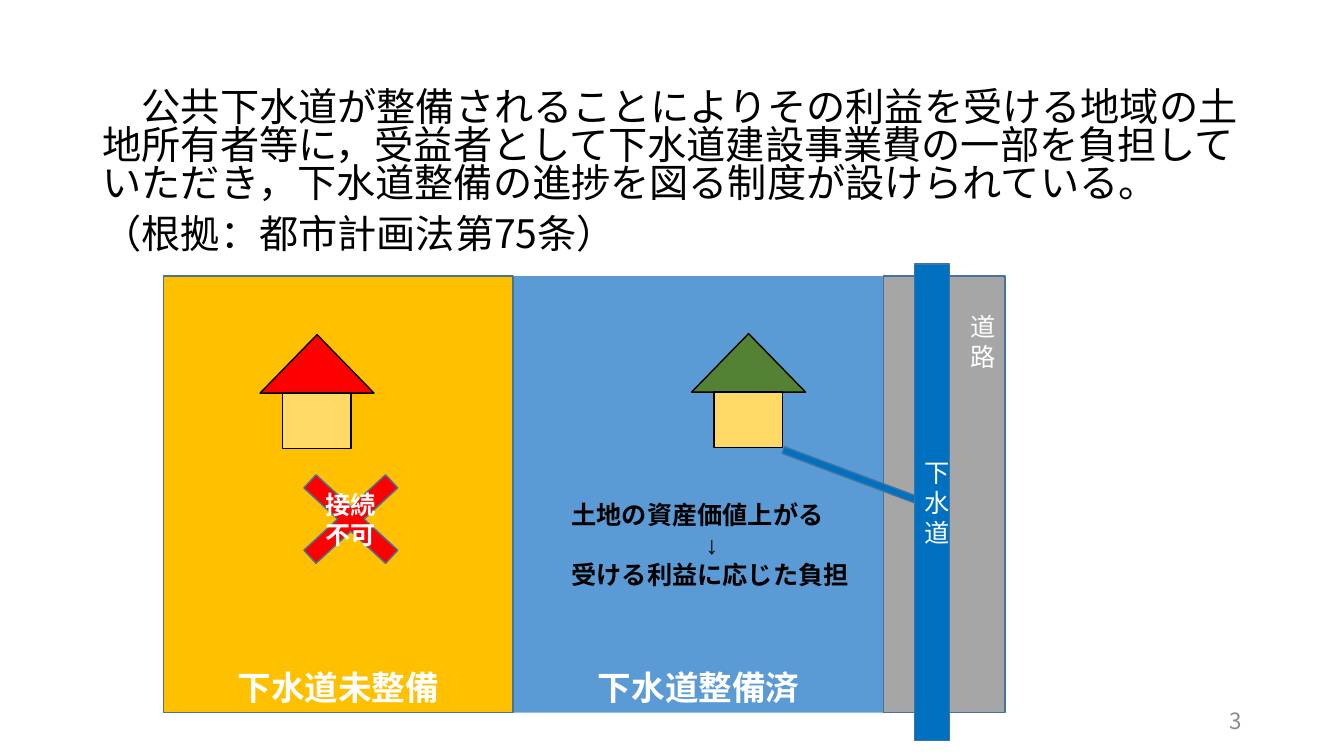
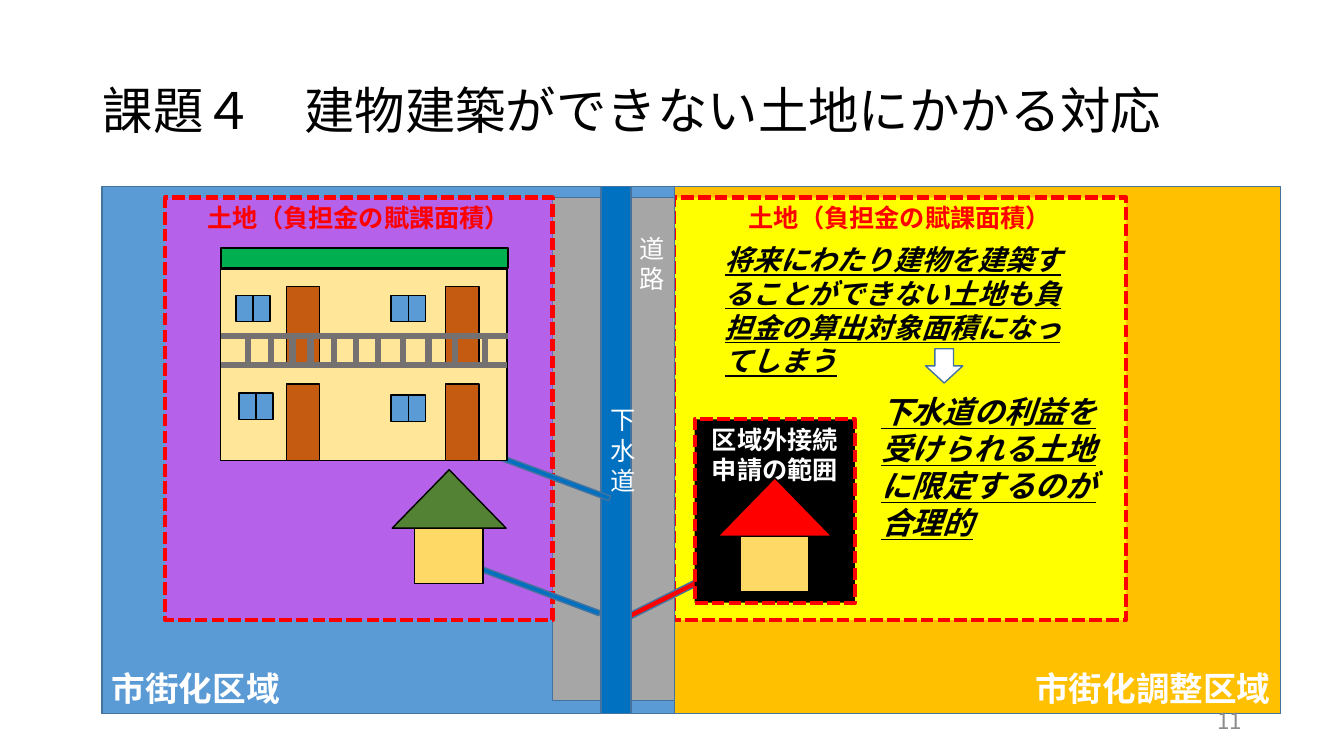
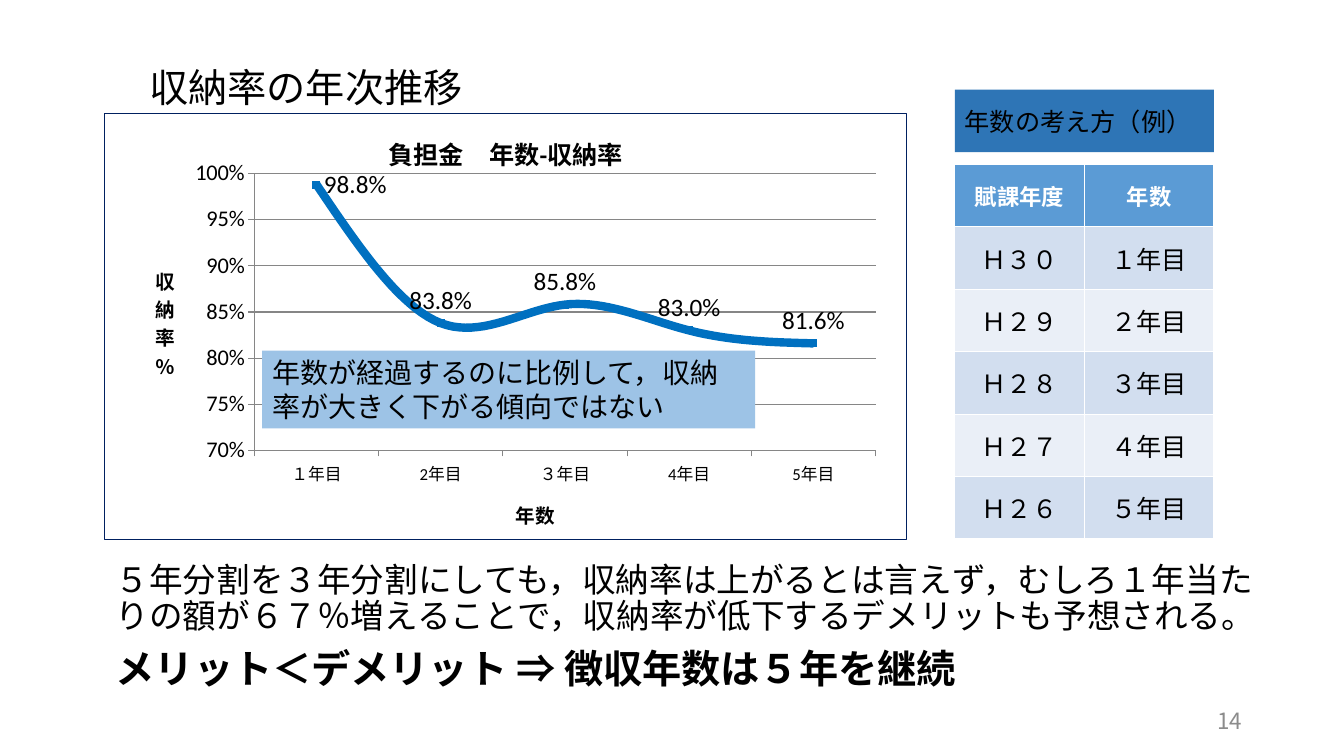
from dataclasses import dataclass, replace

from lxml import etree
from pptx import Presentation
from pptx.chart.data import CategoryChartData
from pptx.dml.color import RGBColor
from pptx.enum.chart import XL_CHART_TYPE, XL_LABEL_POSITION, XL_MARKER_STYLE, XL_TICK_MARK
from pptx.enum.dml import MSO_LINE
from pptx.enum.shapes import MSO_CONNECTOR, MSO_SHAPE
from pptx.enum.text import MSO_ANCHOR, PP_ALIGN
from pptx.oxml import parse_xml
from pptx.oxml.ns import nsdecls, qn
from pptx.util import Emu, Pt

PX = 9144  # 100 px to the inch
RECT, TRIANGLE = MSO_SHAPE.RECTANGLE, MSO_SHAPE.ISOSCELES_TRIANGLE
CROSS, DOWN_ARROW = MSO_SHAPE.MATH_MULTIPLY, MSO_SHAPE.DOWN_ARROW
STRAIGHT, DASH = MSO_CONNECTOR.STRAIGHT, MSO_LINE.SQUARE_DOT
LEFT, CENTER, RIGHT = PP_ALIGN.LEFT, PP_ALIGN.CENTER, PP_ALIGN.RIGHT
TOP, MIDDLE, BOTTOM = MSO_ANCHOR.TOP, MSO_ANCHOR.MIDDLE, MSO_ANCHOR.BOTTOM


@dataclass(frozen=True)
class Theme:
    # Colours
    white: str = "FFFFFF"
    black: str = "000000"
    outline: str = "43739E"
    sky: str = "5B9BD5"
    amber: str = "FFC000"
    yellow: str = "FFFF00"
    violet: str = "B561E9"
    road: str = "A6A6A6"
    sewer: str = "0070C0"
    red: str = "FF0000"
    green_roof: str = "548235"
    wall: str = "FFD966"
    flat_wall: str = "FFE699"
    flat_roof: str = "00B050"
    door: str = "C55A11"
    rail: str = "767171"
    banner: str = "2E75B6"
    note: str = "9DC3E6"
    row_odd: str = "D2DEEF"
    row_even: str = "EAEFF7"
    frame: str = "002060"
    grid: str = "868686"
    muted: str = "8C8C8C"
    # Fonts
    cjk: str = "Noto Sans CJK JP"
    label: str = "Calibri"
    body: str = "Arial"
    # Type sizes
    title: int = 36
    lead: int = 28
    zone: int = 24
    claim: int = 22
    remark: int = 20
    normal: int = 18
    small: int = 16
    axis: int = 14
    tick: int = 12


T = Theme()


@dataclass(frozen=True)
class Style:
    size: int = T.normal
    color: str = T.black
    font: str = T.body
    bold: bool = False
    stress: bool = False  # italic and underlined
    align: int = LEFT
    spacing: float = 1.0
    before: int = 0


LABEL = Style(color=T.white, font=T.label, align=CENTER)
BOLD_LABEL = replace(LABEL, bold=True)
ZONE = replace(BOLD_LABEL, size=T.zone)
AREA = replace(BOLD_LABEL, color=T.red)
LEAD = Style(T.lead, font=T.cjk, spacing=0.9, before=10)
REMARK = Style(T.remark, bold=True, stress=True)


def rgb(value):
    return RGBColor.from_string(value)


def emu(*lengths):
    return [Emu(n * PX) for n in lengths]


# Text
def write(tf, lines, style, anchor=TOP, top=5):
    """Put one paragraph per line; a line is a string or (string, style)."""
    tf.word_wrap = True
    tf.vertical_anchor = anchor
    tf.margin_left, tf.margin_right, tf.margin_top, tf.margin_bottom = emu(10, 10, top, 5)
    for i, line in enumerate(lines):
        string, st = (line, style) if isinstance(line, str) else line
        p = tf.paragraphs[0] if i == 0 else tf.add_paragraph()
        p.alignment, p.line_spacing, p.space_before = st.align, st.spacing, Pt(st.before)
        r = p.add_run()
        r.text = string
        f = r.font
        f.size, f.bold, f.italic, f.underline = Pt(st.size), st.bold, st.stress, st.stress
        f.color.rgb = rgb(st.color)
        f.name = st.font
        etree.SubElement(r._r.get_or_add_rPr(), qn("a:ea"), typeface=T.cjk)


def text(s, box, lines, style, anchor=TOP):
    write(s.shapes.add_textbox(*emu(*box)).text_frame, lines, style, anchor)


# Shapes
def shape(shapes, box, fill, line=None, kind=RECT, width=1, dash=None, rotation=0):
    sp = shapes.add_shape(kind, *emu(*box))
    sp.shadow.inherit = False
    sp.rotation = rotation
    sp.fill.solid()
    sp.fill.fore_color.rgb = rgb(fill)
    if line:
        sp.line.color.rgb = rgb(line)
        sp.line.width = Pt(width)
        if dash:
            sp.line.dash_style = dash
    else:
        sp.line.fill.background()
    return sp


def zone(s, box, fill, name, align=CENTER, line=T.outline):
    sp = shape(s.shapes, box, fill, line)
    write(sp.text_frame, [name], replace(ZONE, align=align), BOTTOM)


def plot_area(s, box, fill, name, style=AREA):
    sp = shape(s.shapes, box, fill, T.red, width=3, dash=DASH)
    write(sp.text_frame, [name], style)


def road(s, box):
    sp = shape(s.shapes, box, T.road, T.outline)
    write(sp.text_frame, ["道", "路"], replace(LABEL, align=RIGHT), top=35)


def sewer(s, box):
    sp = shape(s.shapes, box, T.sewer, T.outline)
    write(sp.text_frame, ["下水道"], LABEL, MIDDLE)


def pipe(s, box, rotation=290.5, fill=T.sewer):
    shape(s.shapes, box, fill, T.outline, rotation=rotation)


def house(s, x, y, roof):
    g = s.shapes.add_group_shape().shapes
    shape(g, (x, y, 113, 58), roof, T.black, TRIANGLE)
    shape(g, (x + 22, y + 58, 68, 55), T.wall, T.black)


def rail(shapes, x1, y1, x2, y2):
    cn = shapes.add_connector(STRAIGHT, *emu(x1, y1, x2, y2))
    cn.line.color.rgb = rgb(T.rail)
    cn.line.width = Pt(4.5)
    etree.SubElement(cn._element.spPr, qn("a:effectLst"))
    return cn


def apartment(s):
    g = s.shapes.add_group_shape().shapes

    def doors(y):
        for x in (284, 442):
            shape(g, (x, y, 33, 76), T.door, T.black)

    wall = shape(g, (219, 267, 284, 190), T.flat_wall, T.black)
    doors(284)
    shape(g, (219, 246, 285, 20), T.flat_roof, T.black)
    # Balcony
    lower = rail(g, 219, 362, 503, 362)
    lower.begin_connect(wall, 1)
    lower.end_connect(wall, 3)
    for x in (246, 269, 290, 308, 331, 353, 375, 400, 425, 451, 481):
        rail(g, x, 333, x, 361)
    rail(g, 219, 333, 504, 333)
    doors(381)
    # Windows of two panes
    for x, y in ((234, 293), (388, 293), (237, 390), (388, 392)):
        for pane in range(2):
            shape(g, (x + 17 * pane, y, 17, 26), T.sky, T.black)


# Table and chart
def year_table(s, box, rows):
    x, y, w, h = box
    table = s.shapes.add_table(len(rows), len(rows[0]), *emu(x, y, w, h)).table
    head = Style(T.small, T.white, bold=True, align=CENTER)
    for i, row in enumerate(rows):
        fill = T.sky if i == 0 else T.row_odd if i % 2 else T.row_even
        for j, string in enumerate(row):
            cell = table.cell(i, j)
            cell.fill.solid()
            cell.fill.fore_color.rgb = rgb(fill)
            cell.vertical_anchor = MIDDLE
            write(cell.text_frame, [string], Style(align=CENTER) if i else head, MIDDLE)


def chart_title(owner, string, size):
    tf = owner.text_frame
    r = tf.paragraphs[0].add_run()
    r.text = string
    r.font.size, r.font.bold, r.font.name = Pt(size), True, T.label
    r.font.color.rgb = rgb(T.black)
    return tf


def rate_chart(s, box):
    data = CategoryChartData(number_format="0.0%")
    data.categories = ["１年目", "2年目", "３年目", "4年目", "5年目"]
    data.add_series("収納率", (0.988, 0.838, 0.858, 0.83, 0.816))
    chart = s.shapes.add_chart(XL_CHART_TYPE.LINE_MARKERS, *emu(*box), data).chart
    chart.has_legend = False
    chart.font.name, chart.font.size = T.label, Pt(T.tick)
    chart.font.color.rgb = rgb(T.black)
    chart_title(chart.chart_title, "負担金　年数-収納率", T.normal)
    chart.chart_title.include_in_layout = False

    # Axes
    cat, val = chart.category_axis, chart.value_axis
    val.minimum_scale, val.maximum_scale, val.major_unit = 0.7, 1, 0.05
    val.tick_labels.number_format = "0%"
    val.tick_labels.number_format_is_linked = False
    val.has_major_gridlines = True
    val.major_gridlines.format.line.color.rgb = rgb(T.grid)
    for axis, size in ((cat, T.tick), (val, T.small)):
        axis.major_tick_mark = XL_TICK_MARK.OUTSIDE
        axis.tick_labels.font.size = Pt(size)
        axis.format.line.color.rgb = rgb(T.grid)
    chart_title(cat.axis_title, "年数", T.axis)
    upright = chart_title(val.axis_title, "収納率％", T.axis)._txBody.bodyPr
    upright.set("rot", "0")
    upright.set("vert", "wordArtVert")

    # Series
    plot = chart.plots[0]
    plot.vary_by_categories = False
    ser = plot.series[0]
    ser.smooth = True
    ser.format.line.color.rgb = rgb(T.sewer)
    ser.format.line.width = Pt(6)
    ser.marker.style, ser.marker.size = XL_MARKER_STYLE.SQUARE, 5
    ser.marker.format.fill.solid()
    ser.marker.format.fill.fore_color.rgb = rgb(T.sewer)
    ser.marker.format.line.color.rgb = rgb(T.sewer)
    labels = ser.data_labels
    labels.show_value = True
    labels.number_format, labels.number_format_is_linked = "0.0%", False
    labels.position = XL_LABEL_POSITION.ABOVE
    first = ser.points[0].data_label
    first.position = XL_LABEL_POSITION.RIGHT
    for owner in (labels, first):
        owner.font.size = Pt(T.normal)

    # Inner plot position and outer frame
    area = chart._chartSpace.chart.plotArea
    for old in area.findall(qn("c:layout")):
        area.remove(old)
    sizes = "".join(f'<c:{k} val="{v}"/>' for k, v in
                    (("x", 0.187), ("y", 0.141), ("w", 0.774), ("h", 0.65)))
    area.insert(0, parse_xml(
        f'<c:layout {nsdecls("c")}><c:manualLayout><c:layoutTarget val="inner"/>'
        f'<c:xMode val="edge"/><c:yMode val="edge"/>{sizes}</c:manualLayout></c:layout>'))
    chart._chartSpace.find(qn("c:txPr")).addprevious(parse_xml(
        f'<c:spPr {nsdecls("c", "a")}><a:noFill/><a:ln w="9525"><a:solidFill>'
        f'<a:srgbClr val="{T.frame}"/></a:solidFill></a:ln></c:spPr>'))


# Slides
def page_number(s, number):
    style = Style(T.small, T.muted, T.cjk, align=RIGHT)
    text(s, (942, 695, 300, 40), [str(number)], style, MIDDLE)


def system_slide(s):
    text(s, (92, 86, 1150, 188), [
        "　公共下水道が整備されることによりその利益を受ける地域の土地所有者等に，受益者として"
        "下水道建設事業費の一部を負担していただき，下水道整備の進捗を図る制度が設けられている。",
        "（根拠：都市計画法第75条）"], replace(LEAD, spacing=0.8))
    zone(s, (509, 274, 368, 433), T.sky, "下水道整備済", line=None)
    zone(s, (162, 274, 347, 433), T.amber, "下水道未整備")
    house(s, 686, 331, T.green_roof)
    road(s, (876, 274, 121, 433))
    pipe(s, (839, 401, 7, 140))
    house(s, 258, 332, T.red)
    sewer(s, (907, 262, 35, 473))
    cross = shape(s.shapes, (270, 443, 156, 144), T.red, T.outline, CROSS)
    cross.adjustments[0] = 0.123
    write(cross.text_frame, ["接続", "不可"], BOLD_LABEL, MIDDLE)
    effect = Style(bold=True)
    text(s, (557, 490, 298, 101),
         ["土地の資産価値上がる", ("↓", replace(effect, align=CENTER)), "受ける利益に応じた負担"],
         effect)


def unbuildable_slide(s):
    area_name = "土地（負担金の賦課面積）"
    zone(s, (669, 185, 601, 523), T.amber, "市街化調整区域", RIGHT)
    plot_area(s, (668, 196, 449, 419), T.yellow, area_name)
    text(s, (92, 40, 1150, 145), ["課題４　建物建築ができない土地にかかる対応"],
         Style(T.title, font=T.cjk, spacing=0.9), MIDDLE)
    zone(s, (101, 185, 568, 523), T.sky, "市街化区域", LEFT)
    road(s, (548, 196, 121, 499))
    pipe(s, (686, 505, 6, 148), 243.5, T.red)
    sewer(s, (596, 185, 30, 523))
    plot_area(s, (164, 196, 384, 419), T.violet, area_name)
    plot_area(s, (689, 416, 159, 182), T.black, "区域外接続申請の範囲", BOLD_LABEL)
    house(s, 712, 474, T.red)
    text(s, (709, 236, 366, 145),
         ["将来にわたり建物を建築することができない土地も負担金の算出対象面積になってしまう"], REMARK)
    pipe(s, (531, 520, 5, 131))
    house(s, 389, 466, T.green_roof)
    pipe(s, (541, 406, 5, 131))
    apartment(s)
    text(s, (864, 385, 240, 192), ["下水道の利益を受けられる土地に限定するのが合理的"],
         replace(REMARK, size=T.claim))
    shape(s.shapes, (918, 346, 37, 34), T.white, T.outline, DOWN_ARROW)


def rate_slide(s):
    rate_chart(s, (103, 112, 797, 424))
    year_table(s, (947, 163, 257, 372), [
        ("賦課年度", "年数"), ("Ｈ３０", "１年目"), ("Ｈ２９", "２年目"),
        ("Ｈ２８", "３年目"), ("Ｈ２７", "４年目"), ("Ｈ２６", "５年目")])
    banner = shape(s.shapes, (947, 89, 257, 62), T.banner)
    write(banner.text_frame, ["年数の考え方（例）"], Style(), MIDDLE)
    note = shape(s.shapes, (260, 348, 489, 77), T.note)
    write(note.text_frame, ["年数が経過するのに比例して，収納率が大きく下がる傾向ではない"],
          Style(T.remark))
    text(s, (105, 554, 1163, 166), [
        "５年分割を３年分割にしても，収納率は上がるとは言えず，むしろ１年当たりの額が"
        "６７％増えることで，収納率が低下するデメリットも予想される。",
        ("メリット＜デメリット ⇒ 徴収年数は５年を継続", replace(LEAD, bold=True))],
        replace(LEAD, size=T.zone))
    text(s, (90, 53, 427, 73), ["収納率の年次推移"], replace(LEAD, align=CENTER), MIDDLE)


def main():
    prs = Presentation()
    prs.slide_width, prs.slide_height = emu(1333, 750)
    for build, number in ((system_slide, 3), (unbuildable_slide, 11), (rate_slide, 14)):
        s = prs.slides.add_slide(prs.slide_layouts[6])
        build(s)
        page_number(s, number)
    prs.save("out.pptx")


if __name__ == "__main__":
    main()
